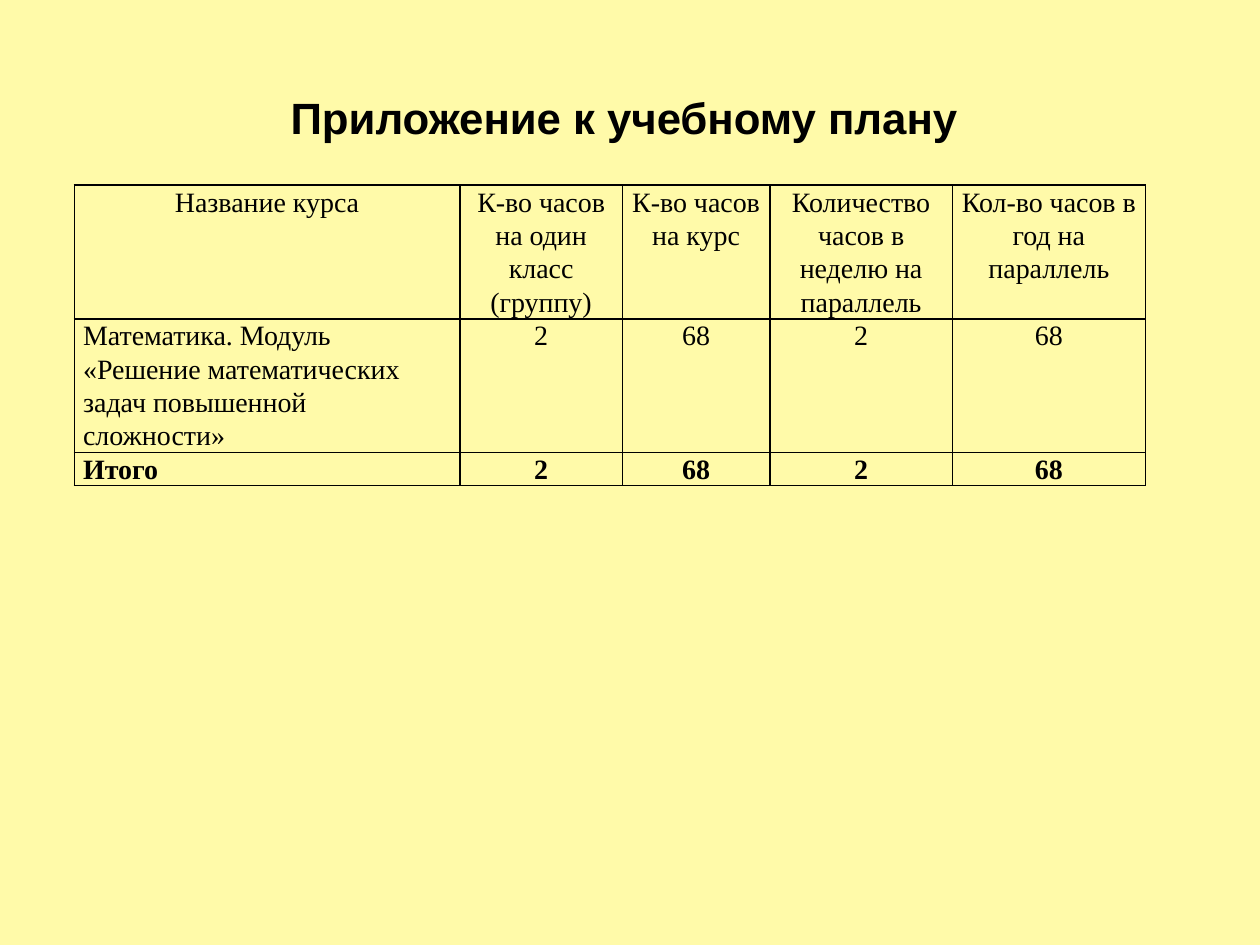
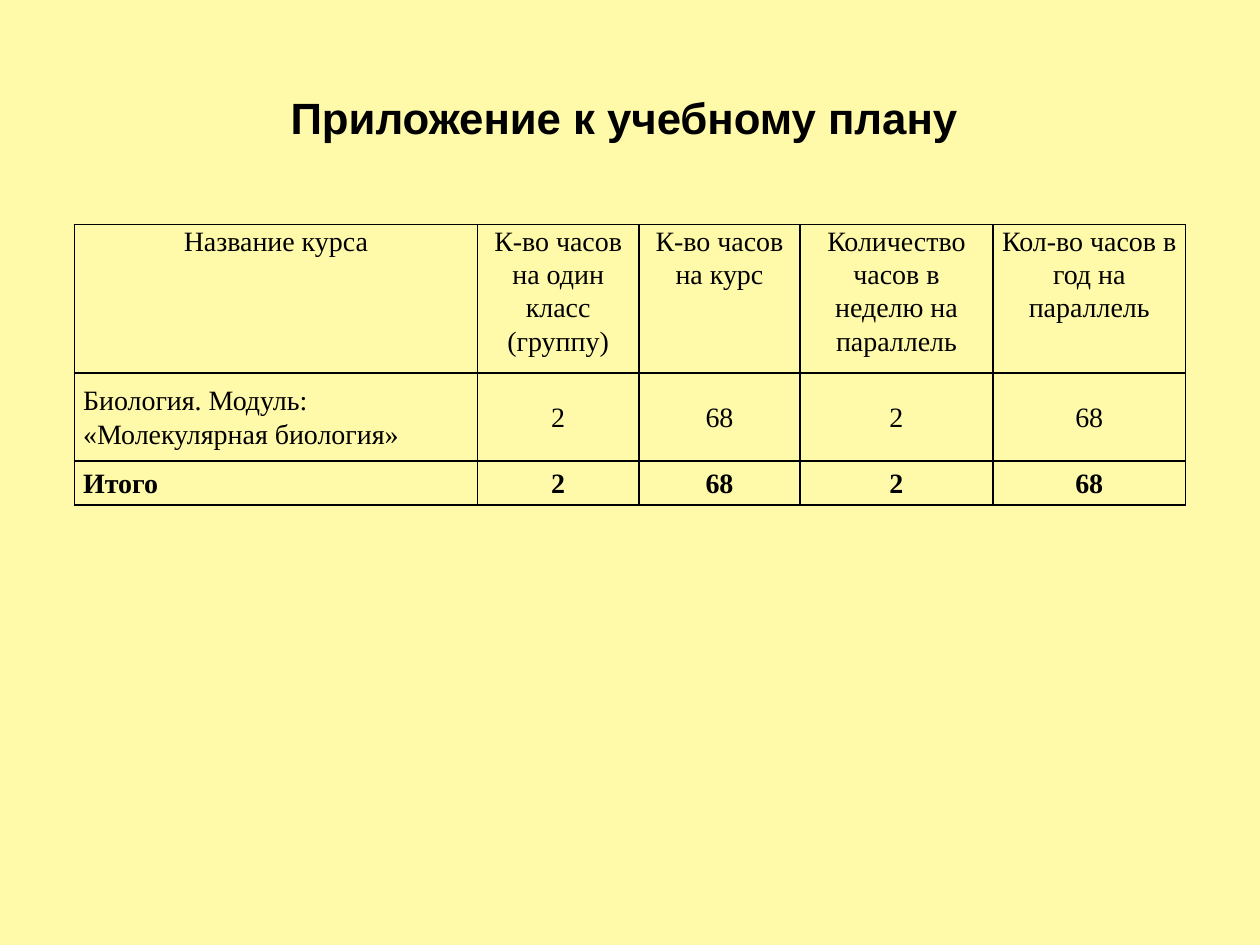
from lxml import etree
from pptx import Presentation
from pptx.dml.color import RGBColor
from pptx.enum import text
from pptx.oxml import ns
from pptx.util import Inches, Pt

COLORS = {"background": "FFFAA9", "ink": "000000"}
TITLE_FONT = "Arial"
TABLE_FONT = "Times New Roman"
TITLE = "Приложение к учебному плану "
HOURS = ["2", "68", "2", "68"]
TABLE_LEFT = 0.59
TITLE_ONLY = 5


def color(name):
    return RGBColor.from_string(COLORS[name])


def add_span(para, wording, font, size, bold):
    span = para.add_run()
    span.text = wording
    span.font.name = font
    span.font.size = Pt(size)
    span.font.bold = bold
    span.font.color.rgb = color("ink")


def add_titled_page(deck):
    page = deck.slides.add_slide(deck.slide_layouts[TITLE_ONLY])
    title = page.shapes.title
    title.left, title.top = Inches(0.5), Inches(0.3)
    title.width, title.height = Inches(9), Inches(1.25)
    title.text_frame.vertical_anchor = text.MSO_ANCHOR.MIDDLE
    para = title.text_frame.paragraphs[0]
    para.alignment = text.PP_ALIGN.CENTER
    add_span(para, TITLE, TITLE_FONT, 25, True)
    return page


def add_borders(cell):
    properties = cell._tc.get_or_add_tcPr()
    for side in ("lnL", "lnR", "lnT", "lnB"):
        line = etree.SubElement(properties, ns.qn(f"a:{side}"), w=str(Pt(1)))
        fill = etree.SubElement(line, ns.qn("a:solidFill"))
        etree.SubElement(fill, ns.qn("a:srgbClr"), val=COLORS["ink"])


def fill_cell(cell, wording, centered, bold, anchor):
    cell.margin_left = cell.margin_right = Inches(0.07)
    cell.margin_top = cell.margin_bottom = 0
    cell.vertical_anchor = anchor
    add_borders(cell)
    cell.fill.background()
    para = cell.text_frame.paragraphs[0]
    para.alignment = text.PP_ALIGN.CENTER if centered else text.PP_ALIGN.LEFT
    para.line_spacing = 1.07
    for index, part in enumerate(wording.split("\n")):
        if index:
            para.add_line_break()
        add_span(para, part, TABLE_FONT, 16, bold)


def add_hours_table(page, top, widths, heights, group_header, course, body_anchor):
    header = ["Название курса", group_header, "К-во часов на курс",
              "Количество часов в неделю на параллель",
              "Кол-во часов в год на параллель"]
    rows = [header, [course] + HOURS, ["Итого"] + HOURS]
    table = page.shapes.add_table(
        len(rows), len(header), Inches(TABLE_LEFT), Inches(top),
        Inches(sum(widths)), Inches(sum(heights))).table
    table.first_row = table.horz_banding = False
    for column, width in zip(table.columns, widths):
        column.width = Inches(width)
    for row, height in zip(table.rows, heights):
        row.height = Inches(height)
    for r, row in enumerate(rows):
        is_header = r == 0
        is_total = r == len(rows) - 1
        anchor = text.MSO_ANCHOR.TOP if is_header else body_anchor
        for c, wording in enumerate(row):
            fill_cell(table.cell(r, c), wording, is_header or c > 0, is_total, anchor)


def main():
    deck = Presentation()
    deck.slide_width, deck.slide_height = Inches(10), Inches(7.5)
    background = deck.slide_master.background.fill
    background.solid()
    background.fore_color.rgb = color("background")

    add_hours_table(
        add_titled_page(deck), 1.47, [3.06, 1.29, 1.17, 1.45, 1.53], [1.06, 1.06, 0.26],
        "К-во часов на один класс (группу)",
        "Математика. Модуль «Решение математических задач повышенной сложности»",
        text.MSO_ANCHOR.TOP)
    add_hours_table(
        add_titled_page(deck), 1.78, [3.2, 1.28, 1.28, 1.53, 1.53], [1.18, 0.7, 0.35],
        "К-во часов на один класс\n(группу)",
        "Биология. Модуль: «Молекулярная биология»",
        text.MSO_ANCHOR.MIDDLE)
    deck.save("out.pptx")


if __name__ == "__main__":
    main()
